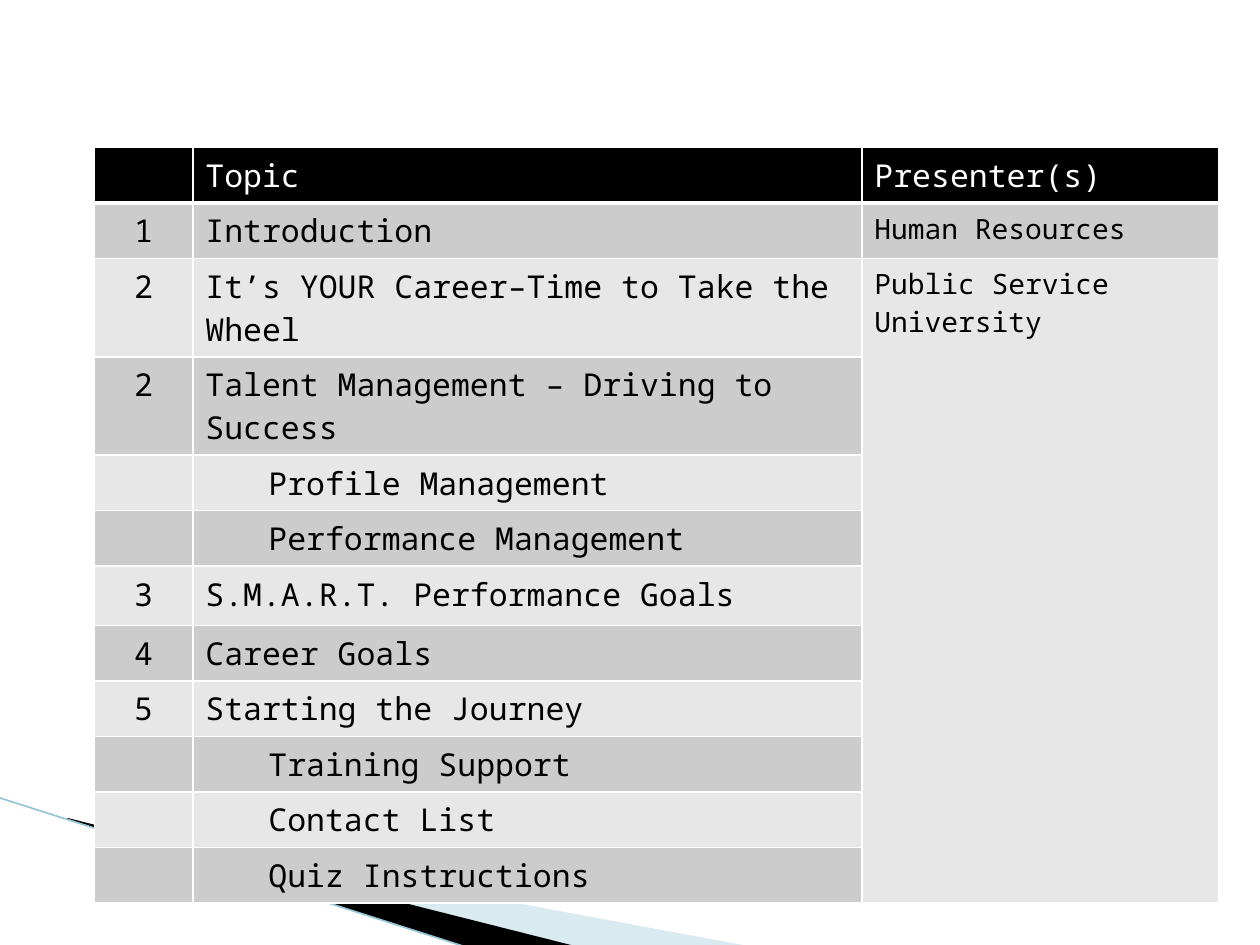
from typing import NamedTuple

from lxml.etree import SubElement as Sub
from pptx import Presentation
from pptx.dml.color import RGBColor as RGB
from pptx.enum.shapes import MSO_CONNECTOR as Conn
from pptx.enum.text import PP_ALIGN as Align
from pptx.oxml.ns import qn
from pptx.util import Inches, Pt

FONT = "Noto Sans Mono"
HUES = {
    "ink": "000000", "paper": "FFFFFF", "dark": "CCCCCC", "light": "E7E7E7",
    "sky": "A0CBDC", "rule": "97C5D8",
}


class Band(NamedTuple):
    hue: str
    alpha: int
    points: list[tuple[float, float]]


class Item(NamedTuple):
    num: str
    topic: str
    host: str = ""
    sub: bool = False
    high: float = 0.41


BANDS = [
    Band("sky", 40, [(0.55, 6.51), (5.95, 7.51), (4.56, 7.51), (0.55, 6.5)]),
    Band("ink", 100, [(0.53, 6.49), (4.57, 7.51), (3.72, 7.52), (0.54, 6.5)]),
]
ITEMS = [
    Item("", "Topic", "Presenter(s)"),
    Item("1", "Introduction", "Human Resources"),
    Item("2", "It’s YOUR Career–Time to Take the Wheel",
         "Public Service University"),
    Item("2", "Talent Management – Driving to Success"),
    Item("", "Profile Management", sub=True),
    Item("", "Performance Management", sub=True),
    Item("3", "S.M.A.R.T. Performance Goals", high=0.47),
    Item("4", "Career Goals"),
    Item("5", "Starting the Journey"),
    Item("", "Training Support", sub=True),
    Item("", "Contact List", sub=True),
    Item("", "Quiz Instructions", sub=True),
]
COLS = [0.78, 5.31, 2.83]


def tint(name: str) -> RGB:
    return RGB.from_string(HUES[name])


def draw_band(slide, band: Band) -> None:
    pts = [(Inches(x), Inches(y)) for x, y in band.points]
    pen = slide.shapes.build_freeform(*pts[0])
    pen.add_line_segments(pts[1:], close=True)
    shape = pen.convert_to_shape()
    shape.shadow.inherit = False
    shape.line.fill.background()
    shape.fill.solid()
    shape.fill.fore_color.rgb = tint(band.hue)
    if band.alpha < 100:
        hue = shape.fill._xPr.find(".//" + qn("a:srgbClr"))
        Sub(hue, qn("a:alpha"), val=str(band.alpha * 1000))


def draw_rule(slide) -> None:
    rule = slide.shapes.add_connector(
        Conn.STRAIGHT, Inches(-0.01), Inches(6.33), Inches(3.71), Inches(7.52))
    rule.line.color.rgb = tint("rule")
    rule.line.width = Pt(0.95)
    Sub(rule._element.spPr, qn("a:effectLst"))


def style(cell, hue: str, base: float) -> None:
    cell.fill.solid()
    cell.fill.fore_color.rgb = tint(hue)
    props = cell._tc.get_or_add_tcPr()
    # Borders stand before the fill
    for spot, side in enumerate("LRTB"):
        wide = Pt(base if side == "B" else 1)
        edge = Sub(props, qn(f"a:ln{side}"), w=str(wide))
        fill = Sub(edge, qn("a:solidFill"))
        Sub(fill, qn("a:srgbClr"), val=HUES["paper"])
        props.insert(spot, edge)


def write(cell, text: str, size: int, hue: str, align: Align,
          sub: bool = False) -> None:
    para = cell.text_frame.paragraphs[0]
    para.alignment = align
    if sub:
        para.level = 1
        props = para._p.get_or_add_pPr()
        props.set("marL", str(Inches(0.5)))
        props.set("indent", "0")
    if not text:
        para.font.size = Pt(size)
        return
    run = para.add_run()
    run.text = text
    run.font.name = FONT
    run.font.size = Pt(size)
    run.font.color.rgb = tint(hue)


def draw_table(slide) -> None:
    high = sum(item.high for item in ITEMS)
    table = slide.shapes.add_table(
        len(ITEMS), len(COLS), Inches(0.75), Inches(1.17),
        Inches(sum(COLS)), Inches(high)).table
    for col, wide in zip(table.columns, COLS):
        col.width = Inches(wide)
    for r, item in enumerate(ITEMS):
        table.rows[r].height = Inches(item.high)
        head = r == 0
        back = "ink" if head else "dark" if r % 2 else "light"
        hue = "paper" if head else "ink"
        cells = [table.cell(r, c) for c in range(len(COLS))]
        for cell in cells:
            style(cell, back, 3 if head else 1)
        write(cells[0], item.num, 18, hue, Align.CENTER)
        write(cells[1], item.topic, 18, hue, Align.LEFT, item.sub)
        write(cells[2], item.host, 18 if head else 16, hue, Align.LEFT)
    # One presenter covers every topic after the introduction
    table.cell(2, 2).merge(table.cell(len(ITEMS) - 1, 2))


def main() -> None:
    deck = Presentation()
    deck.slide_width, deck.slide_height = Inches(10), Inches(7.5)
    slide = deck.slides.add_slide(deck.slide_layouts[6])
    # Corner sweep
    for band in BANDS:
        draw_band(slide, band)
    draw_rule(slide)
    # Agenda
    draw_table(slide)
    deck.save("out.pptx")


if __name__ == "__main__":
    main()
